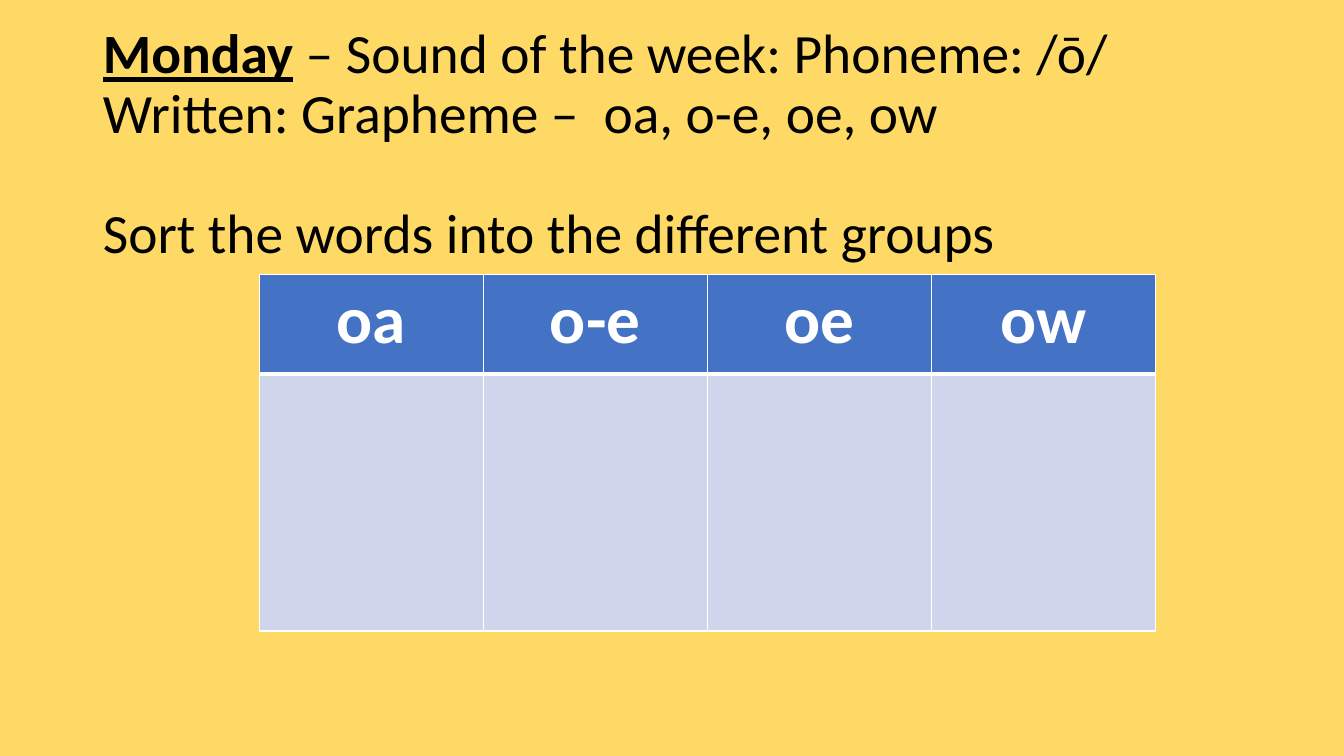
from lxml import etree
from pptx import Presentation
from pptx import util as u
from pptx.dml.color import RGBColor
from pptx.enum import text
from pptx.oxml.ns import qn

YELLOW = RGBColor(0xFF, 0xD9, 0x66)
BLUE = RGBColor(0x44, 0x72, 0xC4)
PALE = RGBColor(0xCF, 0xD5, 0xEA)
WHITE = RGBColor(0xFF, 0xFF, 0xFF)
BLACK = RGBColor(0, 0, 0)

FONT = "Calibri"
TITLE_SIZE = 39.6
LINE_SPACING = 0.9
GRAPHEMES = ["oa", "o-e", "oe", "ow"]
ROW_SHARES = [0.28, 0.72]


def style_run(r, size, color, bold):
    r.font.name = FONT
    r.font.size = u.Pt(size)
    r.font.color.rgb = color
    r.font.bold = bold


def set_border(cell, side, width):
    ln = etree.SubElement(cell._tc.get_or_add_tcPr(), qn("a:ln" + side),
                          w=str(u.Pt(width)))
    fill = etree.SubElement(ln, qn("a:solidFill"))
    etree.SubElement(fill, qn("a:srgbClr"), val=str(WHITE))


def add_title(s, left, top, width, height):
    sp = s.shapes.title
    sp.left, sp.top, sp.width, sp.height = map(u.Inches, (left, top, width, height))
    tf = sp.text_frame
    tf.word_wrap = True
    tf.auto_size = text.MSO_AUTO_SIZE.NONE
    tf.vertical_anchor = text.MSO_ANCHOR.MIDDLE

    # Day and sound, then the task one line further down
    sound, task = tf.paragraphs[0], tf.add_paragraph()
    day = sound.add_run()
    day.text = "Monday"
    sound.add_run().text = " – Sound of the week: Phoneme: /ō/"
    sound.add_line_break()
    sound.add_run().text = "Written: Grapheme –  oa, o-e, oe, ow"
    task.text = "Sort the words into the different groups"
    task.space_before = u.Pt(43)

    for p in tf.paragraphs:
        p.alignment = text.PP_ALIGN.LEFT
        p.line_spacing = LINE_SPACING
        for r in p.runs:
            style_run(r, TITLE_SIZE, BLACK, False)
    day.font.bold = day.font.underline = True


def add_sorting_table(s, left, top, width, height):
    table = s.shapes.add_table(len(ROW_SHARES), len(GRAPHEMES),
                               *map(u.Inches, (left, top, width, height))).table
    for row, share in zip(table.rows, ROW_SHARES):
        row.height = u.Inches(height * share)

    for col, grapheme in enumerate(GRAPHEMES):
        head, body = table.cell(0, col), table.cell(1, col)

        # White grid with a heavier line under the header
        for cell, widths in ((head, (1, 1, 1, 3)), (body, (1, 1, 3, 1))):
            for side, width in zip("LRTB", widths):
                set_border(cell, side, width)

        for cell, color in ((head, BLUE), (body, PALE)):
            cell.fill.solid()
            cell.fill.fore_color.rgb = color

        head.text = grapheme
        p = head.text_frame.paragraphs[0]
        p.alignment = text.PP_ALIGN.CENTER
        style_run(p.runs[0], 48, WHITE, True)


def main():
    prs = Presentation()
    prs.slide_width, prs.slide_height = u.Inches(13.33), u.Inches(7.5)
    s = prs.slides.add_slide(prs.slide_layouts[5])
    s.background.fill.solid()
    s.background.fill.fore_color.rgb = YELLOW
    add_title(s, 0.92, 0.72, 11.5, 1.45)
    add_sorting_table(s, 2.57, 2.72, 8.89, 3.54)
    prs.save("out.pptx")


if __name__ == "__main__":
    main()
